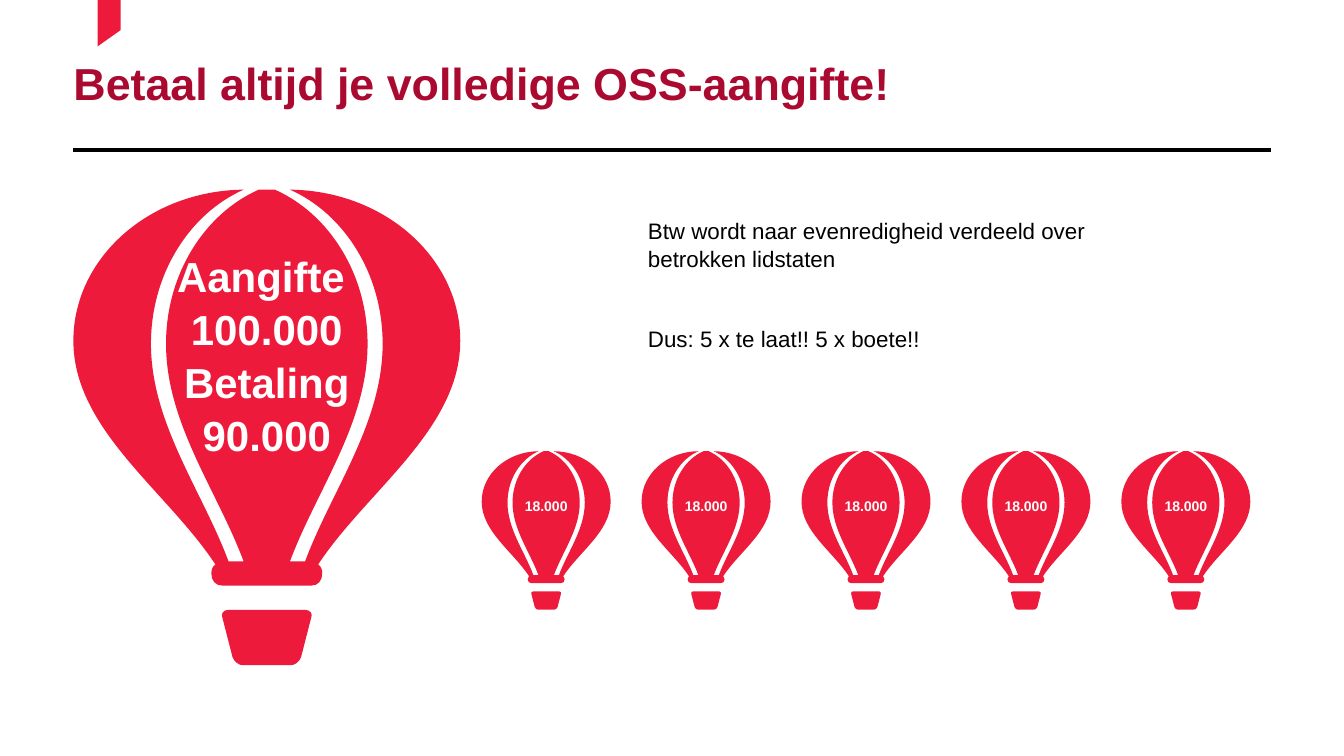
from dataclasses import dataclass

from pptx import Presentation
from pptx.dml.color import RGBColor as Rgb
from pptx.enum.shapes import MSO_CONNECTOR as Link
from pptx.enum.text import MSO_ANCHOR as Anchor, PP_ALIGN as Align
from pptx.oxml.ns import qn
from pptx.util import Cm, Pt
from lxml.etree import SubElement


@dataclass(frozen=True)
class Theme:
    font: str = "Arial"
    red: Rgb = Rgb(0xED, 0x1A, 0x3B)
    dark: Rgb = Rgb(0xAA, 0x0A, 0x2F)
    black: Rgb = Rgb(0, 0, 0)
    white: Rgb = Rgb(0xFF, 0xFF, 0xFF)
    title: Pt = Pt(32)
    large: Pt = Pt(30)
    body: Pt = Pt(16)
    small: Pt = Pt(10)
    lead: float = 1.05


THEME = Theme()

# Right half of the balloon, measured from its axis and top in a 384 x 472 grid;
# a step of one point is a straight edge, a step of three is a curve
WIDE, HIGH = 384, 472
BAG = [
    [(0, 393)], [(44, 393)],
    [(51, 393), (55, 388), (55, 381)],
    [(55, 377), (54, 374), (51, 372)],
    [(99, 299), (192, 238), (192, 150)],
    [(192, 68), (117, 1), (23, 0)],
    [(77, 24), (115, 84), (115, 153)],
    [(115, 232), (64, 299), (38, 369)],
    [(23, 369)],
    [(49, 299), (100, 232), (100, 153)],
    [(100, 84), (62, 24), (8, 0)],
    [(0, 0)],
]
BASKET = [
    [(0, 417)], [(38, 417)],
    [(43, 417), (46, 421), (44, 425)],
    [(34, 464)],
    [(32, 469), (28, 472), (23, 472)],
    [(0, 472)],
]


def apply(item, **values):
    for name, value in values.items():
        setattr(item, name, value)


def write(frame, text, size, color, align=Align.LEFT, bold=False, lead=THEME.lead):
    frame.text = text
    for para in frame.paragraphs:
        apply(para, alignment=align, line_spacing=lead)
        apply(para.font, name=THEME.font, size=size, bold=bold)
        para.font.color.rgb = color


def outline(steps, scale):
    """Mirror a half outline about its axis and scale it."""
    half = [point for step in steps for point in step]
    whole = half + [(-x, y) for x, y in half[-2::-1]]
    return [(round(x * scale), round(y * scale)) for x, y in whole]


def bend(shape, steps):
    """Turn each run of three edges that stands for a curve into one."""
    edges = shape._element.iter(qn("a:lnTo"))
    edges = iter(list(edges))
    for part in steps:
        sizes = [len(step) for step in part[1:]]
        for size in sizes + sizes[::-1]:
            edge = next(edges)
            if size == 3:
                edge.tag = qn("a:cubicBezTo")
                for extra in (next(edges), next(edges)):
                    edge.append(extra[0])
                    extra.getparent().remove(extra)


def draw(slide, rings, left, top, color):
    """Draw closed outlines as one flat shape."""
    pen = slide.shapes.build_freeform(*rings[0][0])
    for index, ring in enumerate(rings):
        if index:
            pen.move_to(*ring[0])
        pen.add_line_segments(ring[1:], close=True)
    shape = pen.convert_to_shape(left, top)
    shape.shadow.inherit = False
    shape.fill.solid()
    shape.fill.fore_color.rgb = color
    shape.line.fill.background()
    return shape


def balloon(slide, left, top, width, text, size):
    scale = width / WIDE
    parts = (BAG, BASKET)
    rings = [outline(part, scale) for part in parts]
    shape = draw(slide, rings, left + width // 2, top, THEME.red)
    bend(shape, parts)
    frame = shape.text_frame
    apply(frame, margin_left=0, margin_top=0, margin_right=0, word_wrap=True,
          margin_bottom=round(HIGH * scale * 0.31),
          vertical_anchor=Anchor.MIDDLE)
    write(frame, text, size, THEME.white, Align.CENTER, True)


def header(slide, left, top, width, height):
    # Ribbon at the slide's top edge
    ribbon = [(0, 0), (Cm(0.58), 0), (Cm(0.58), Cm(0.76)), (0, Cm(1.17))]
    draw(slide, [ribbon], left + Cm(0.61), 0, THEME.red)
    # Title
    title = slide.shapes.title
    apply(title, left=left, top=top, width=width, height=height)
    frame = title.text_frame
    apply(frame, margin_left=0, margin_top=0, margin_right=0, margin_bottom=0,
          word_wrap=True, vertical_anchor=Anchor.BOTTOM)
    write(frame, "Betaal altijd je volledige OSS-aangifte!", THEME.title,
          THEME.dark, bold=True, lead=0.9)
    # Rule below the title
    base = top + height + Cm(1.01)
    rule = slide.shapes.add_connector(Link.STRAIGHT, left, base, left + width, base)
    rule.line.width = Pt(3)
    rule.line.color.rgb = THEME.black
    SubElement(rule._element.spPr, qn("a:effectLst"))


def notice(slide, left, top, width, height):
    frame = slide.shapes.add_textbox(left, top, width, height).text_frame
    frame.word_wrap = True
    write(frame, "Btw wordt naar evenredigheid verdeeld over betrokken lidstaten\n"
          "Dus: 5 x te laat!! 5 x boete!!", THEME.body, THEME.black)
    frame.paragraphs[1].space_before = Pt(37)


def shares(slide, left, top, width, pitch, count):
    for index in range(count):
        balloon(slide, left + index * pitch, top, width, "18.000", THEME.small)


def main():
    deck = Presentation()
    apply(deck, slide_width=Cm(33.87), slide_height=Cm(19.05))
    slide = deck.slides.add_slide(deck.slide_layouts[5])
    header(slide, Cm(1.85), Cm(1.3), Cm(30.18), Cm(1.47))
    balloon(slide, Cm(1.85), Cm(4.78), Cm(9.75),
            "Aangifte \v100.000\nBetaling\n90.000", THEME.large)
    shares(slide, Cm(12.14), Cm(11.37), Cm(3.25), Cm(4.03), 5)
    notice(slide, Cm(16.08), Cm(5.31), Cm(11.68), Cm(4.75))
    deck.save("out.pptx")


if __name__ == "__main__":
    main()
